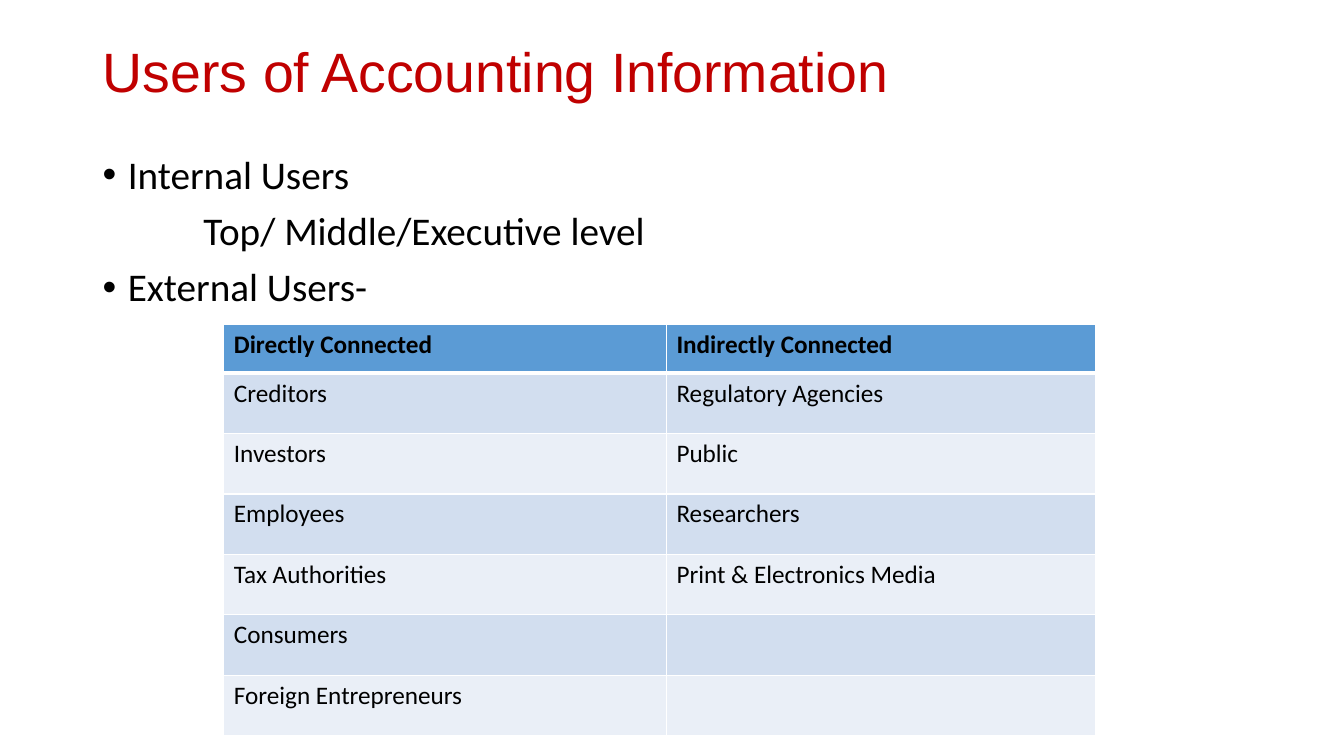
from dataclasses import dataclass

from lxml import etree
from pptx import Presentation
from pptx.dml.color import RGBColor
from pptx.enum.text import MSO_ANCHOR
from pptx.oxml.ns import qn
from pptx.util import Inches, Pt

MIDDLE = MSO_ANCHOR.MIDDLE
TITLE_ONLY = 5


@dataclass(frozen=True)
class Theme:
    title_font: str = "Arial"
    body_font: str = "Calibri"
    title_size: float = 39.6
    body_size: float = 28
    table_size: float = 18
    title_color: str = "C00000"
    text_color: str = "000000"
    header_fill: str = "5B9BD5"
    band_fills: tuple = ("D2DEEF", "EAEFF7")
    border_color: str = "FFFFFF"
    thin_border: float = 1
    thick_border: float = 3


THEME = Theme()

# Text, left margin in inches, bulleted
USER_LINES = [
    ("Internal Users", 0.25, True),
    ("Top/ Middle/Executive level", 1, False),
    ("External Users-", 0.25, True),
]
EXTERNAL_USERS = [
    ("Directly Connected", "Indirectly Connected"),
    ("Creditors", "Regulatory Agencies"),
    ("Investors", "Public"),
    ("Employees", "Researchers"),
    ("Tax Authorities", "Print & Electronics Media"),
    ("Consumers", ""),
    ("Foreign Entrepreneurs", ""),
]
COLUMN_WIDTHS = (4.39, 4.26)
HEADER_HEIGHT, ROW_HEIGHT = 0.48, 0.6


def place(shape, box):
    shape.left, shape.top, shape.width, shape.height = map(Inches, box)


def add_run(para, text, font, size, color, bold=False):
    run = para.add_run()
    run.text = text
    run.font.name = font
    run.font.size = Pt(size)
    run.font.bold = bold
    run.font.color.rgb = RGBColor.from_string(color)


def set_indent(para, margin, bulleted):
    properties = para._p.get_or_add_pPr()
    properties.set("marL", str(Inches(margin)))
    properties.set("indent", str(Inches(-margin if bulleted else 0)))
    if bulleted:
        font = etree.SubElement(properties, qn("a:buFont"))
        font.set("typeface", THEME.title_font)
        etree.SubElement(properties, qn("a:buChar")).set("char", "•")
    else:
        etree.SubElement(properties, qn("a:buNone"))


def set_borders(cell, top, bottom):
    """Draw the four cell edges; top and bottom are widths in points."""
    properties = cell._tc.get_or_add_tcPr()
    thin = THEME.thin_border
    for edge, width in (("lnL", thin), ("lnR", thin), ("lnT", top), ("lnB", bottom)):
        line = etree.SubElement(properties, qn(f"a:{edge}"))
        line.set("w", str(Pt(width)))
        fill = etree.SubElement(line, qn("a:solidFill"))
        etree.SubElement(fill, qn("a:srgbClr")).set("val", THEME.border_color)


def add_title(page, box):
    title = page.shapes.title
    place(title, box)
    title.text_frame.vertical_anchor = MIDDLE
    title.text_frame.word_wrap = True
    para = title.text_frame.paragraphs[0]
    para.alignment = 1
    para.line_spacing = 0.9
    add_run(para, "Users of Accounting Information",
            THEME.title_font, THEME.title_size, THEME.title_color)


def add_user_lines(page, box):
    frame = page.shapes.add_textbox(*map(Inches, box)).text_frame
    frame.word_wrap = True
    for index, (text, margin, bulleted) in enumerate(USER_LINES):
        para = frame.add_paragraph() if index else frame.paragraphs[0]
        para.line_spacing = 0.9
        para.space_before = Pt(10)
        set_indent(para, margin, bulleted)
        add_run(para, text, THEME.body_font, THEME.body_size, THEME.text_color)


def style_cell(cell, text, row_index):
    is_header = row_index == 0
    thin, thick = THEME.thin_border, THEME.thick_border
    set_borders(cell, top=thick if row_index == 1 else thin,
                bottom=thick if is_header else thin)
    color = THEME.header_fill if is_header else THEME.band_fills[(row_index - 1) % 2]
    cell.fill.solid()
    cell.fill.fore_color.rgb = RGBColor.from_string(color)
    if text:
        add_run(cell.text_frame.paragraphs[0], text, THEME.body_font,
                THEME.table_size, THEME.text_color, bold=is_header)


def add_external_users(page, left, top):
    height = HEADER_HEIGHT + ROW_HEIGHT * (len(EXTERNAL_USERS) - 1)
    box = (left, top, sum(COLUMN_WIDTHS), height)
    table = page.shapes.add_table(
        len(EXTERNAL_USERS), len(COLUMN_WIDTHS), *map(Inches, box)).table
    for column, width in zip(table.columns, COLUMN_WIDTHS):
        column.width = Inches(width)
    for row_index, texts in enumerate(EXTERNAL_USERS):
        table.rows[row_index].height = Inches(ROW_HEIGHT if row_index else HEADER_HEIGHT)
        for column_index, text in enumerate(texts):
            style_cell(table.cell(row_index, column_index), text, row_index)


def main():
    deck = Presentation()
    deck.slide_width, deck.slide_height = Inches(13.33), Inches(7.5)
    page = deck.slides.add_slide(deck.slide_layouts[TITLE_ONLY])
    add_title(page, (0.92, 0.4, 11.5, 0.67))
    add_user_lines(page, (0.92, 1.49, 11.5, 5.27))
    add_external_users(page, 2.22, 3.22)
    deck.save("out.pptx")


if __name__ == "__main__":
    main()
